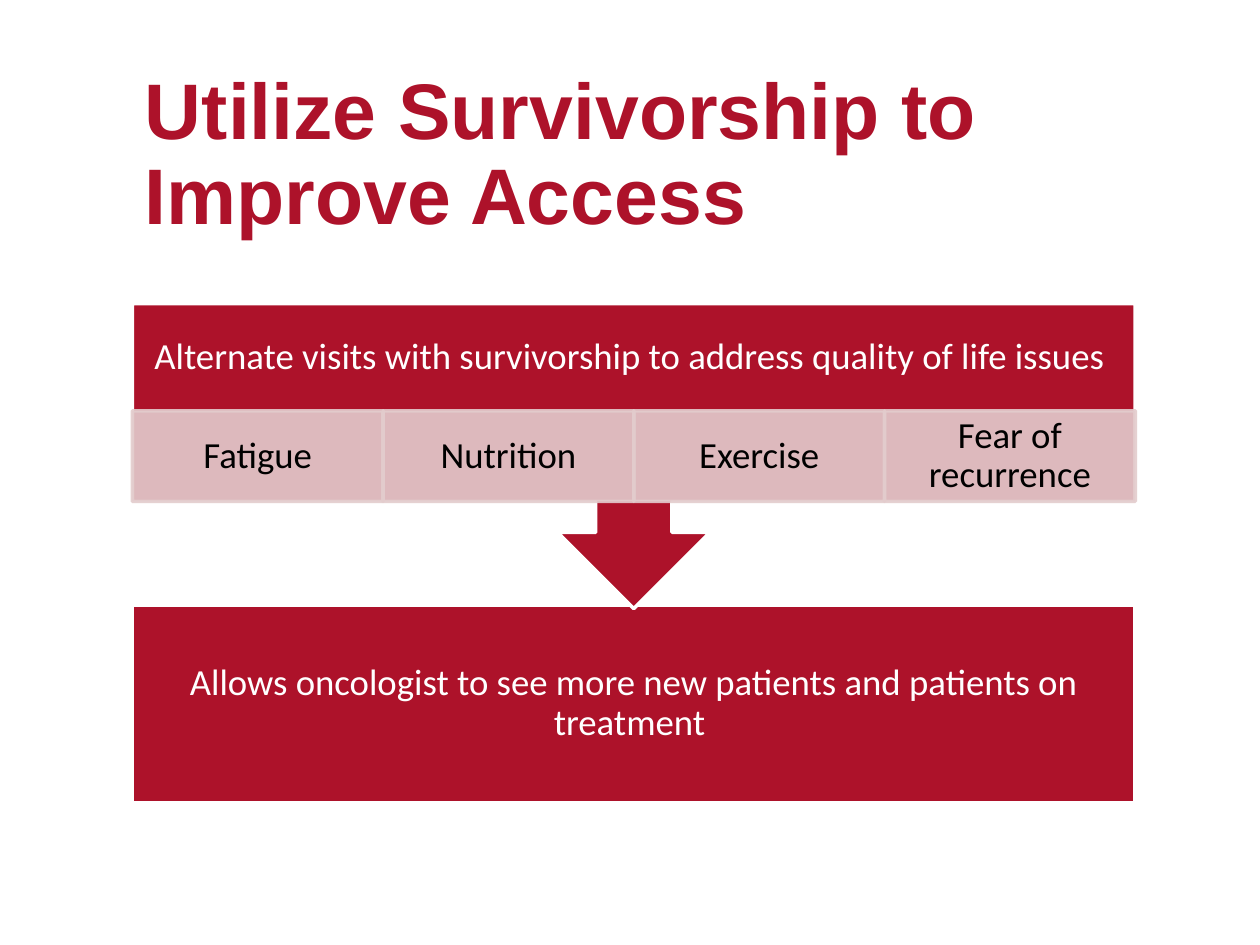
from lxml.etree import SubElement
from pptx import Presentation
from pptx.dml.color import RGBColor
from pptx.enum.shapes import MSO_SHAPE as Shape
from pptx.enum.text import MSO_ANCHOR as Anchor, PP_ALIGN as Align
from pptx.oxml.ns import qn
from pptx.util import Inches, Pt

RED, PINK, WHITE, BLACK = "AD122A", "E3CCCD", "FFFFFF", "000000"
LEFT, WIDTH = 1.05, 7.96
TOPICS = ["Fatigue", "Nutrition", "Exercise", "Fear of recurrence"]


def color(value):
    """Turn a hex string into a colour."""
    return RGBColor.from_string(value)


def set_paint(paint, value, opacity):
    """Apply a solid colour with an opacity in percent to a fill."""
    paint.solid()
    paint.fore_color.rgb = color(value)
    if opacity < 100:
        hex_color = paint._xPr.find(qn("a:solidFill")).find(qn("a:srgbClr"))
        SubElement(hex_color, qn("a:alpha"), val=str(opacity * 1000))


class SlideBuilder:
    """Hold the style and the current slide."""

    body_font, body_size = "Calibri", 21
    title_font, title_size = "Arial", 45
    line_spacing = 0.9

    def __init__(self, presentation):
        """Add a title-only slide."""
        self.slide = presentation.slides.add_slide(presentation.slide_layouts[5])

    def set_text(self, shape, text, font_name, size, font_color, align, anchor, margins, bold=False):
        """Set and format the text of a shape."""
        frame = shape.text_frame
        frame.text = text
        frame.word_wrap = True
        frame.vertical_anchor = anchor
        frame.margin_left = frame.margin_right = Inches(margins[0])
        frame.margin_top = frame.margin_bottom = Inches(margins[1])
        paragraph = frame.paragraphs[0]
        paragraph.alignment = align
        paragraph.line_spacing = self.line_spacing
        font = paragraph.runs[0].font
        font.name, font.size, font.bold = font_name, Pt(size), bold
        font.color.rgb = color(font_color)

    def title(self, text, *box):
        """Place and fill the title placeholder."""
        shape = self.slide.shapes.title
        shape.left, shape.top, shape.width, shape.height = map(Inches, box)
        self.set_text(shape, text, self.title_font, self.title_size, RED,
                      Align.LEFT, Anchor.BOTTOM, (0.1, 0), True)

    def block(self, kind, box, fill, line, opacity=100):
        """Draw a filled and outlined shape."""
        shape = self.slide.shapes.add_shape(kind, *map(Inches, box))
        shape.shadow.inherit = False
        set_paint(shape.fill, fill, opacity)
        set_paint(shape.line.fill, line, opacity)
        shape.line.width = Pt(2)
        return shape

    def label(self, shape, text, font_color, vertical_margin=0.16):
        """Put centred body text in a shape."""
        self.set_text(shape, text, self.body_font, self.body_size, font_color,
                      Align.CENTER, Anchor.MIDDLE, (0.16, vertical_margin))

    def text_box(self, text, box, font_color):
        """Add a text box with centred body text."""
        self.label(self.slide.shapes.add_textbox(*map(Inches, box)), text, font_color)


def main():
    """Build and save the presentation."""
    presentation = Presentation()
    presentation.slide_width, presentation.slide_height = Inches(10), Inches(7.5)
    builder = SlideBuilder(presentation)
    builder.title("Utilize Survivorship to Improve Access", LEFT, 0.43, 8.32, 1.49)

    outcome = builder.block(Shape.RECTANGLE, (LEFT, 4.8, WIDTH, 1.57), RED, WHITE)
    builder.label(outcome, "Allows oncologist to see more new patients and patients on treatment ", WHITE)

    callout = builder.block(Shape.UP_ARROW_CALLOUT, (LEFT, 2.41, WIDTH, 2.42), RED, WHITE)
    callout.rotation = 180
    builder.text_box("Alternate visits with survivorship to address quality of life issues ",
                     (LEFT, 2.41, WIDTH, 0.85), WHITE)

    topic_width = WIDTH / len(TOPICS)
    for index, topic in enumerate(TOPICS):
        box = (LEFT + index * topic_width, 3.26, topic_width, 0.72)
        cell = builder.block(Shape.RECTANGLE, box, PINK, PINK, 90)
        builder.label(cell, topic, BLACK, 0.03)

    presentation.save("out.pptx")


if __name__ == "__main__":
    main()
